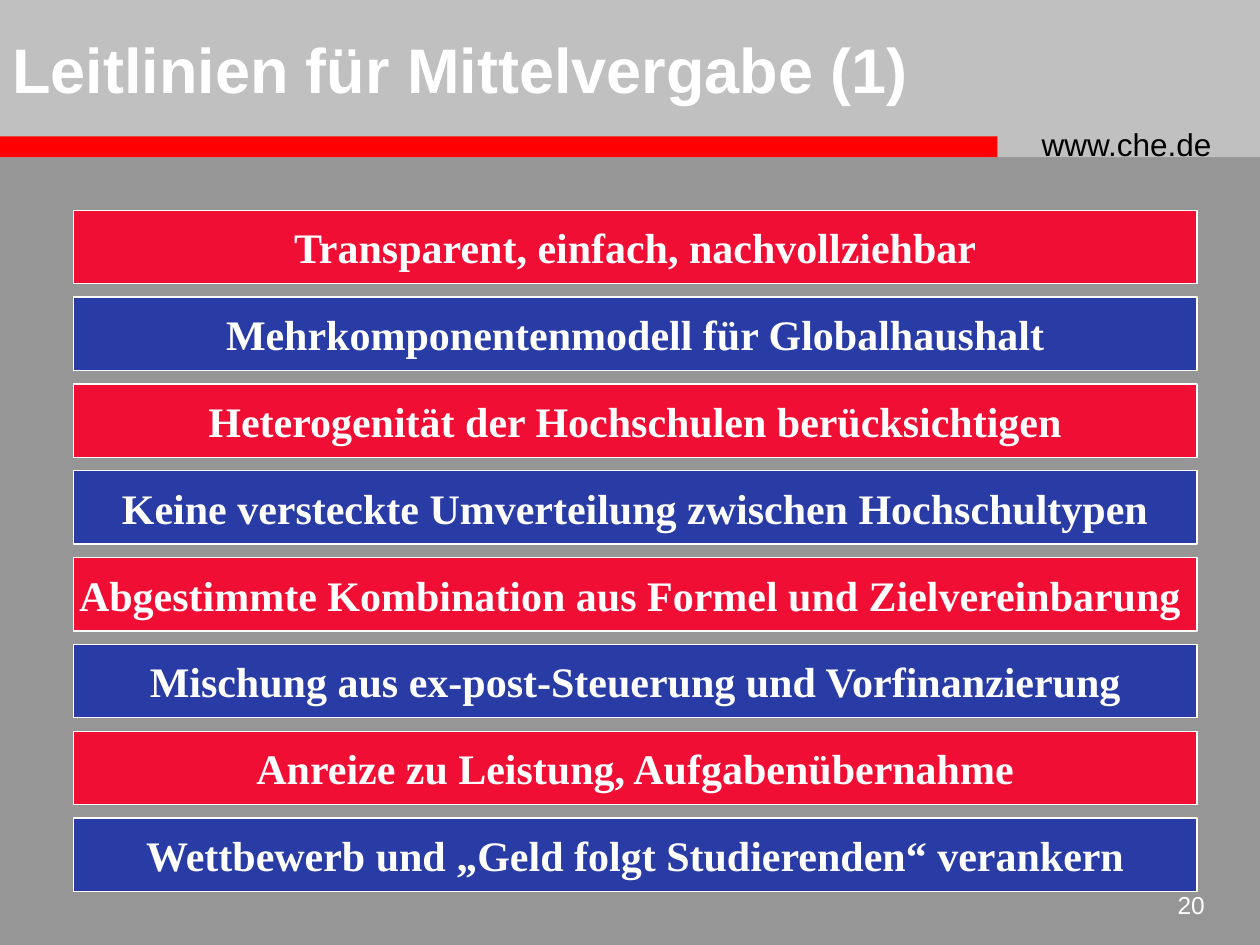
from pptx import Presentation
from pptx.dml.color import RGBColor as RGB
from pptx.enum.shapes import MSO_SHAPE as Shape
from pptx.enum.text import MSO_ANCHOR as Anchor, PP_ALIGN as Align
from pptx.util import Cm, Pt

HUES = {
    "back": "969696",
    "head": "C0C0C0",
    "bar": "FF0000",
    "red": "F00E34",
    "blue": "293BA5",
    "white": "FFFFFF",
    "black": "000000",
}
RULES = [
    "Transparent, einfach, nachvollziehbar",
    "Mehrkomponentenmodell für Globalhaushalt",
    "Heterogenität der Hochschulen berücksichtigen",
    "Keine versteckte Umverteilung zwischen Hochschultypen",
    "Abgestimmte Kombination aus Formel und Zielvereinbarung ",
    "Mischung aus ex-post-Steuerung und Vorfinanzierung",
    "Anreize zu Leistung, Aufgabenübernahme",
    "Wettbewerb und „Geld folgt Studierenden“ verankern",
]


def add_rect(x, y, w, h, hue):
    rect = slide.shapes.add_shape(Shape.RECTANGLE, Cm(x), Cm(y), Cm(w), Cm(h))
    rect.shadow.inherit = False
    rect.fill.solid()
    rect.fill.fore_color.rgb = RGB.from_string(HUES[hue])
    rect.line.fill.background()
    return rect


def set_text(shape, text, size, hue="white", face="Arial", bold=False,
             align=Align.LEFT, anchor=Anchor.TOP, wrap=True):
    frame = shape.text_frame
    frame.word_wrap = wrap
    frame.vertical_anchor = anchor
    line = frame.paragraphs[0]
    line.text = text
    line.alignment = align
    font = line.font
    font.name, font.size, font.bold = face, Pt(size), bold
    font.color.rgb = RGB.from_string(HUES[hue])


deck = Presentation()
deck.slide_width, deck.slide_height = Cm(25.4), Cm(19.05)
slide = deck.slides.add_slide(deck.slide_layouts[6])
slide.background.fill.solid()
slide.background.fill.fore_color.rgb = RGB.from_string(HUES["back"])

add_rect(0, 0, 25.4, 3.17, "head")
add_rect(0, 2.75, 20.11, 0.42, "bar")

site = slide.shapes.add_textbox(Cm(20.75), Cm(2.39), Cm(4.45), Cm(1.02))
set_text(site, "www.che.de", 18, "black")
page = slide.shapes.add_textbox(Cm(23.06), Cm(17.81), Cm(1.48), Cm(1.07))
set_text(page, "20", 14, align=Align.RIGHT)
title = slide.shapes.add_textbox(0, 0, Cm(20.52), Cm(2.75))
set_text(title, "Leitlinien für Mittelvergabe (1)", 36, bold=True, anchor=Anchor.MIDDLE)

for i, rule in enumerate(RULES):
    box = add_rect(1.48, 4.24 + 1.75 * i, 22.65, 1.48, ("red", "blue")[i % 2])
    box.line.color.rgb = RGB.from_string(HUES["white"])
    box.line.width = Pt(0.75)
    set_text(box, rule, 24, face="Times New Roman", bold=True,
             align=Align.CENTER, anchor=Anchor.MIDDLE, wrap=False)

deck.save("out.pptx")
